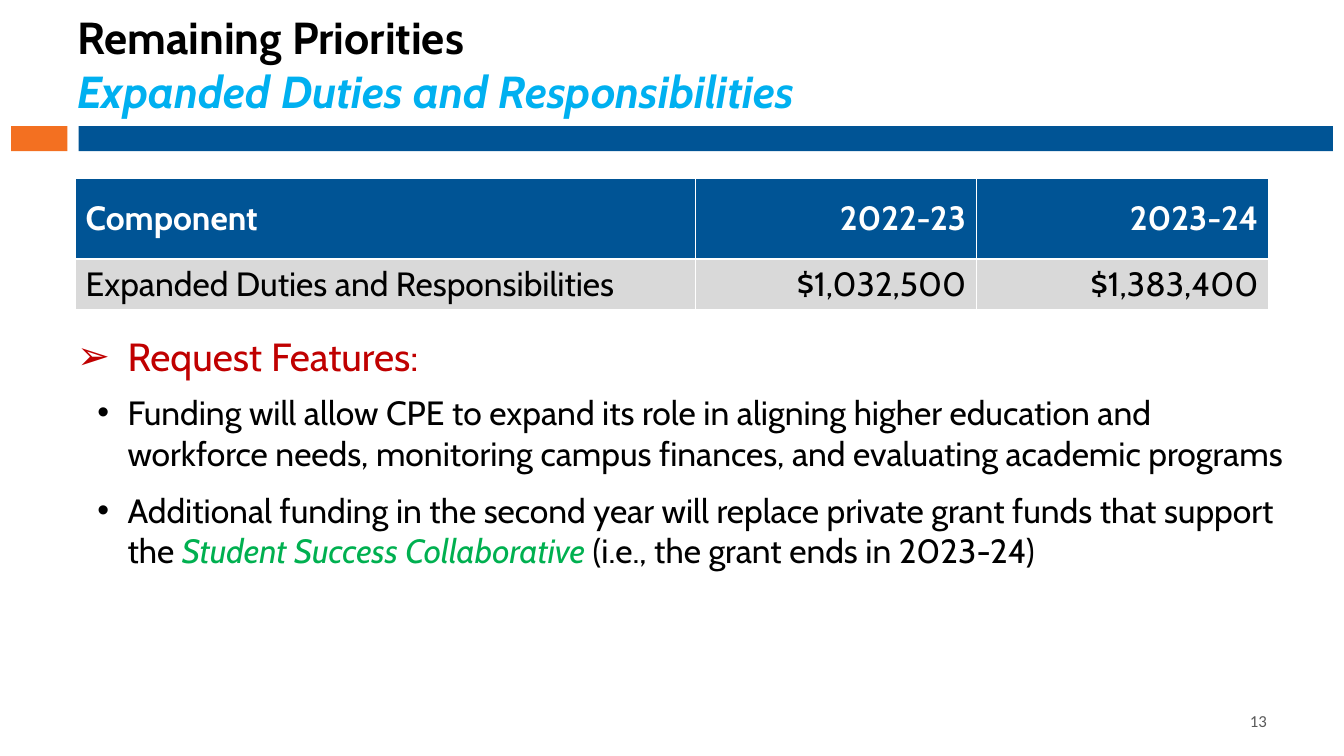
from dataclasses import dataclass

from lxml import etree
from pptx import Presentation
from pptx.dml.color import RGBColor
from pptx.enum import shapes, text
from pptx.oxml import ns
from pptx.util import Inches, Pt


@dataclass(frozen=True)
class Theme:
    navy: str = "005495"
    orange: str = "F37021"
    sky: str = "00B0F0"
    red: str = "C00000"
    green: str = "00B050"
    black: str = "000000"
    white: str = "FFFFFF"
    band: str = "D9D9D9"
    grey: str = "595959"
    font: str = "Cabin"
    plain: str = "Calibri"
    title: int = 32
    head: int = 28
    body: int = 24
    note: int = 12


T = Theme()
WIDE, HIGH = 13.33, 7.5


def style(font, color, size=None, name=T.font, bold=None, italic=None):
    font.color.rgb = RGBColor.from_string(color)
    if size:
        font.size, font.name = Pt(size), name
    font.bold, font.italic = bold, italic


def add_run(para, words, color, italic=None):
    run = para.add_run()
    run.text = words
    style(run.font, color, italic=italic)


def add_box(slide, box, anchor=text.MSO_ANCHOR.TOP):
    frame = slide.shapes.add_textbox(*map(Inches, box)).text_frame
    frame.word_wrap = True
    frame.vertical_anchor = anchor
    return frame


def set_bullet(para, mark, hang):
    props = para._p.get_or_add_pPr()
    props.set("marL", str(Inches(0.5)))
    props.set("indent", str(-Inches(hang)))
    face = etree.SubElement(props, ns.qn("a:buFont"))
    face.set("typeface", "Arial")
    etree.SubElement(props, ns.qn("a:buChar")).set("char", mark)


# Title with its subtitle
def add_title(slide, box):
    para = add_box(slide, box, text.MSO_ANCHOR.BOTTOM).paragraphs[0]
    style(para.font, T.black, T.title, bold=True)
    add_run(para, "Remaining Priorities", T.black)
    para.add_line_break()
    add_run(para, "Expanded Duties and Responsibilities", T.sky, True)


# Two-colour rule under the title
def add_rule(slide, box):
    left, top, width, height = box
    tab, gap = 0.56, 0.11
    bar = left + tab + gap
    for x, w, color in ((left, tab, T.orange),
                        (bar, left + width - bar, T.navy)):
        block = slide.shapes.add_shape(
            shapes.MSO_SHAPE.RECTANGLE, *map(Inches, (x, top, w, height)))
        block.shadow.inherit = False
        block.fill.solid()
        block.fill.fore_color.rgb = RGBColor.from_string(color)
        block.line.fill.background()


# Funding table
def add_costs(slide, box):
    rows = (("Component", "2022-23", "2023-24"),
            ("Expanded Duties and Responsibilities",
             "$1,032,500", "$1,383,400"))
    looks = ((0.8, T.navy, T.white, True), (0.49, T.band, T.black, False))
    table = slide.shapes.add_table(2, 3, *map(Inches, box)).table
    for col, share in zip(table.columns, (0.52, 0.235, 0.245)):
        col.width = Inches(box[2] * share)
    for r, (words, (tall, fill, ink, bold)) in enumerate(zip(rows, looks)):
        table.rows[r].height = Inches(tall)
        for c, word in enumerate(words):
            cell = table.cell(r, c)
            cell.text = word
            cell.vertical_anchor = text.MSO_ANCHOR.MIDDLE
            cell.fill.solid()
            cell.fill.fore_color.rgb = RGBColor.from_string(fill)
            para = cell.text_frame.paragraphs[0]
            para.alignment = text.PP_ALIGN.RIGHT if c else text.PP_ALIGN.LEFT
            style(para.font, ink, T.body, bold=bold)
            style(para.runs[0].font, ink, bold=bold)


# Bulleted request features
def add_points(slide, box):
    points = (
        ("➢", 0.5, 9, T.head, [("Request Features:", T.red, None)]),
        ("•", 0.3, 12, T.body, [
            ("Funding will allow CPE to expand its role in aligning higher "
             "education and workforce needs, monitoring campus finances, "
             "and evaluating academic programs", T.black, None)]),
        ("•", 0.3, 12, T.body, [
            ("Additional funding in the second year will replace private "
             "grant funds that support the ", T.black, None),
            ("Student Success Collaborative ", T.green, True),
            ("(i.e., the grant ends in 2023-24)", T.black, None)]),
    )
    frame = add_box(slide, box)
    for i, (mark, hang, after, size, parts) in enumerate(points):
        para = frame.add_paragraph() if i else frame.paragraphs[0]
        para.space_after = Pt(after)
        set_bullet(para, mark, hang)
        style(para.font, parts[0][1], size)
        for part in parts:
            add_run(para, *part)


# Page number
def add_page(slide, box):
    para = add_box(slide, box, text.MSO_ANCHOR.MIDDLE).paragraphs[0]
    para.alignment = text.PP_ALIGN.RIGHT
    style(para.font, T.grey, T.note, T.plain)
    add_run(para, "13", T.grey)


def main():
    deck = Presentation()
    deck.slide_width, deck.slide_height = Inches(WIDE), Inches(HIGH)
    slide = deck.slides.add_slide(deck.slide_layouts[6])
    edge = WIDE * 0.05
    add_rule(slide, (0.11, HIGH / 6, WIDE - 0.22, HIGH / 30))
    add_page(slide, (WIDE - edge - 0.56, 6.95, 0.56, 0.4))
    add_costs(slide, (0.75, 1.77, 11.83, 1.29))
    add_points(slide, (edge, 3.25, 12.25, 3.46))
    add_title(slide, (edge, 0.17, 11.44, 1.04))
    deck.save("out.pptx")


if __name__ == "__main__":
    main()
